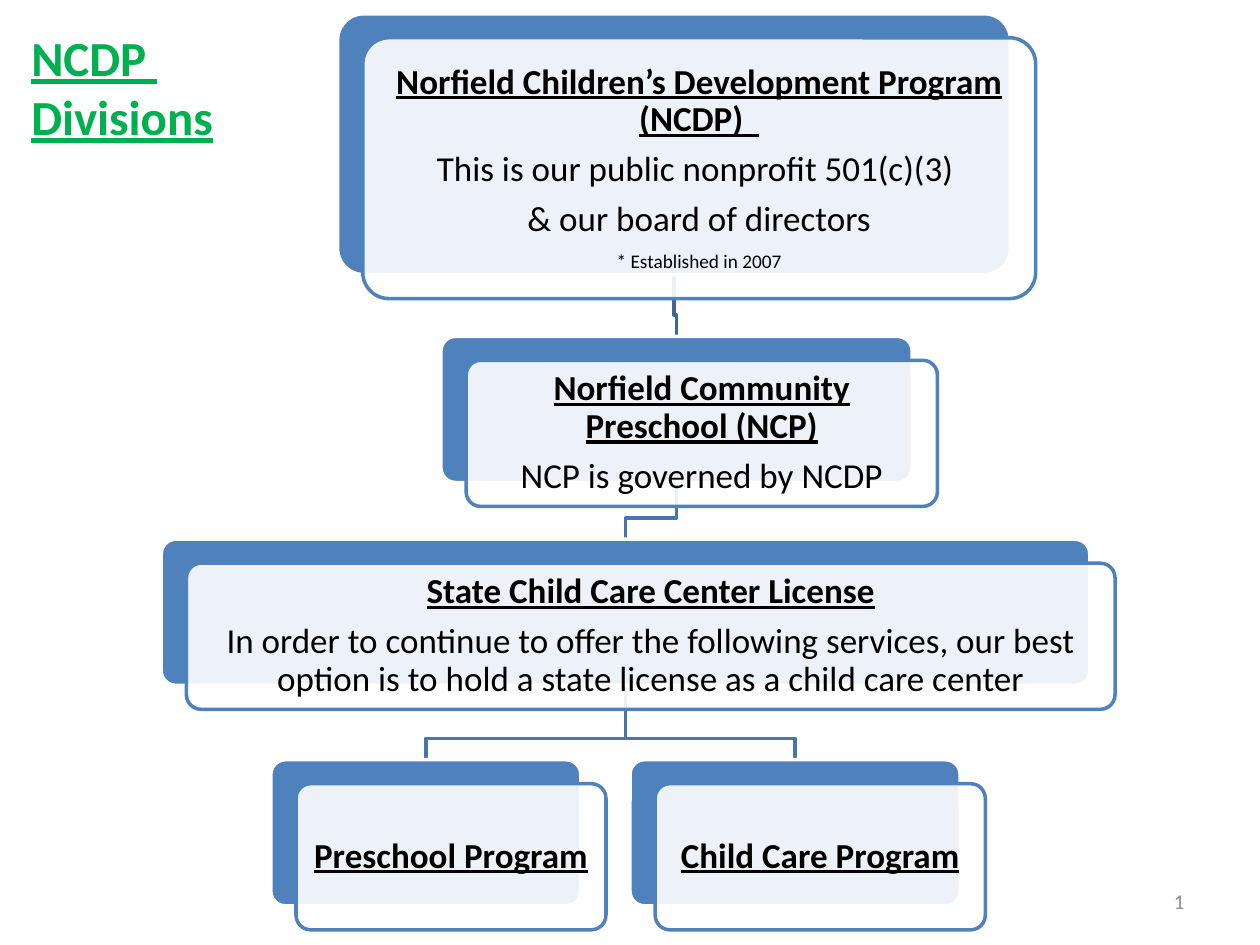
from dataclasses import dataclass

from lxml import etree
from pptx import Presentation
from pptx.dml.color import RGBColor
from pptx.enum.shapes import MSO_SHAPE
from pptx.enum.text import MSO_ANCHOR, PP_ALIGN
from pptx.oxml.ns import qn
from pptx.util import Inches, Pt

ROUNDED = MSO_SHAPE.ROUNDED_RECTANGLE
MIDDLE = MSO_ANCHOR.MIDDLE
LEFT, CENTER, RIGHT = PP_ALIGN.LEFT, PP_ALIGN.CENTER, PP_ALIGN.RIGHT

COLORS = {
    "blue": "4F81BD",
    "link": "4875AC",
    "top_link": "3F6797",
    "white": "FFFFFF",
    "black": "000000",
    "green": "00B050",
    "gray": "8C8C8C",
}
FONT = "Calibri"
OFFSET_X, OFFSET_Y = 0.2, 0.19
BEND_GAP = 0.17
CORNER = 0.1
ROW_H = 1.16


@dataclass(frozen=True)
class Line:
    text: str
    size: int = 20
    heading: bool = False


@dataclass(frozen=True)
class Card:
    left: float
    top: float
    width: float
    height: float
    lines: tuple[Line, ...]

    @property
    def center(self) -> float:
        return self.left + self.width / 2

    @property
    def bottom(self) -> float:
        return self.top + self.height


@dataclass(frozen=True)
class Link:
    parent: Card
    child: Card
    color: str = "link"


def rgb(name: str) -> RGBColor:
    return RGBColor.from_string(COLORS[name])


def add_run(p, text: str, size: int, color: str, heading: bool = False) -> None:
    r = p.add_run()
    r.text = text
    r.font.name = FONT
    r.font.size = Pt(size)
    r.font.bold = heading
    r.font.underline = heading
    r.font.color.rgb = rgb(color)


def add_link(slide, link: Link) -> None:
    parent, child = link.parent, link.child
    bend = child.top - BEND_GAP
    points = [(parent.center, bend), (child.center, bend), (child.center, child.top)]
    builder = slide.shapes.build_freeform(Inches(parent.center), Inches(parent.bottom))
    builder.add_line_segments([(Inches(x), Inches(y)) for x, y in points], close=False)
    sp = builder.convert_to_shape()
    sp.shadow.inherit = False
    sp.fill.background()
    sp.line.color.rgb = rgb(link.color)
    sp.line.width = Pt(2)


def add_panel(slide, card: Card, dx: float, dy: float, fill: str, line: str):
    sp = slide.shapes.add_shape(ROUNDED, Inches(card.left + dx), Inches(card.top + dy),
                                Inches(card.width), Inches(card.height))
    sp.adjustments[0] = CORNER
    sp.shadow.inherit = False
    sp.fill.solid()
    sp.fill.fore_color.rgb = rgb(fill)
    sp.line.color.rgb = rgb(line)
    sp.line.width = Pt(2)
    return sp


def add_card(slide, card: Card) -> None:
    add_panel(slide, card, 0, 0, "blue", "white")
    sp = add_panel(slide, card, OFFSET_X, OFFSET_Y, "white", "blue")
    color = sp.fill._xPr.find(qn("a:solidFill"))[0]
    etree.SubElement(color, qn("a:alpha"), val="90000")
    tf = sp.text_frame
    tf.word_wrap = True
    tf.vertical_anchor = MIDDLE
    tf.margin_left = tf.margin_right = tf.margin_top = tf.margin_bottom = Inches(0.08)
    for i, line in enumerate(card.lines):
        p = tf.add_paragraph() if i else tf.paragraphs[0]
        p.alignment = CENTER
        p.line_spacing = 0.9
        p.space_after = Pt(line.size * 0.35)
        add_run(p, line.text, line.size, "black", line.heading)


def add_label(slide, left: float, top: float, width: float, height: float,
              lines: list[str], size: int, color: str, align, heading: bool = False):
    box = slide.shapes.add_textbox(Inches(left), Inches(top), Inches(width), Inches(height))
    tf = box.text_frame
    tf.word_wrap = True
    for i, text in enumerate(lines):
        p = tf.add_paragraph() if i else tf.paragraphs[0]
        p.alignment = align
        add_run(p, text, size, color, heading)
    return box


def main() -> None:
    prs = Presentation()
    prs.slide_width, prs.slide_height = Inches(10), Inches(7.5)
    s = prs.slides.add_slide(prs.slide_layouts[6])

    program = Card(2.68, 0.11, 5.34, 2.07, (
        Line("Norfield Children’s Development Program (NCDP)  ", heading=True),
        Line("This is our public nonprofit 501(c)(3) "),
        Line("& our board of directors"),
        Line("* Established in 2007", size=11),
    ))
    community = Card(3.5, 2.67, 3.74, ROW_H, (
        Line("Norfield Community Preschool (NCP)", heading=True),
        Line("NCP is governed by NCDP"),
    ))
    state_license = Card(1.28, 4.28, 7.37, ROW_H, (
        Line("State Child Care Center License", heading=True),
        Line("In order to continue to offer the following services, our best "
             "option is to hold a state license as a child care center"),
    ))
    preschool = Card(2.15, 6.03, 2.46, ROW_H, (Line("Preschool Program", heading=True),))
    child_care = Card(5, 6.03, 2.62, ROW_H, (Line("Child Care Program", heading=True),))

    for link in (
        Link(state_license, child_care),
        Link(state_license, preschool),
        Link(community, state_license),
        Link(program, community, "top_link"),
    ):
        add_link(s, link)
    for card in (program, community, state_license, preschool, child_care):
        add_card(s, card)

    add_label(s, 0.15, 0.17, 9.17, 1.04, ["NCDP ", "Divisions"], 28, "green", LEFT, True)
    number = add_label(s, 7.17, 6.95, 2.33, 0.4, ["1"], 12, "gray", RIGHT)
    number.text_frame.vertical_anchor = MIDDLE
    prs.save("out.pptx")


if __name__ == "__main__":
    main()
